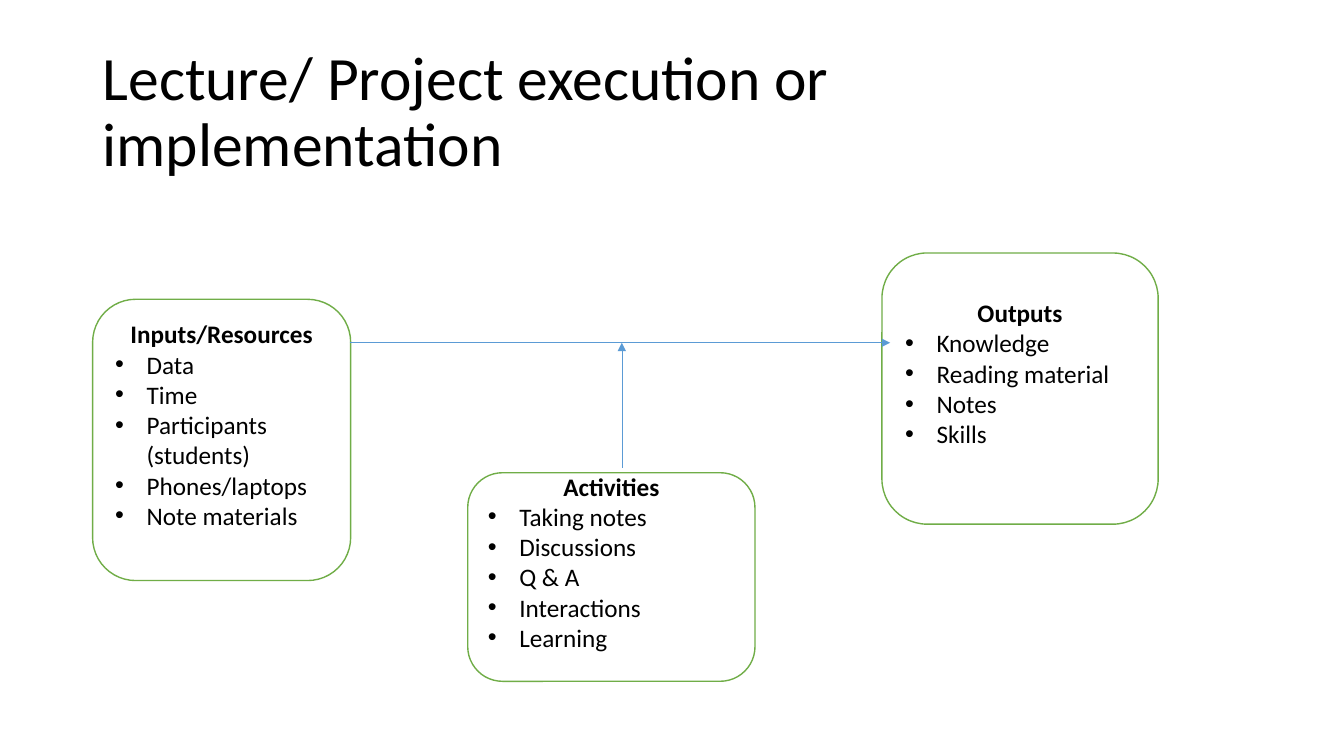
from lxml.etree import SubElement
from pptx import Presentation
from pptx.dml.color import RGBColor
from pptx.enum.shapes import MSO_CONNECTOR, MSO_SHAPE
from pptx.enum.text import MSO_ANCHOR, PP_ALIGN
from pptx.oxml.ns import qn
from pptx.util import Pt

COLORS = {"text": "000000", "box": "FFFFFF", "outline": "70AD47", "arrow": "5B9BD5"}
FONT = "Calibri"
INDENT = Pt(22.5)
LINE_HEIGHT = 22

STAGES = [
    ("Inputs/Resources", (66.2, 213.8, 184.3, 200.9),
     ["Data", "Time", "Participants (students)", "Phones/laptops", "Note materials"]),
    ("Outputs", (630, 180.7, 197.3, 193.7),
     ["Knowledge", "Reading material", "Notes", "Skills"]),
    ("Activities", (334.1, 337.7, 205.2, 149),
     ["Taking notes", "Discussions", "Q & A", "Interactions", "Learning"]),
]
ARROWS = [(249.8, 244.8, 635.8, 244.8), (444.2, 334.1, 444.2, 244.8)]


def color(name):
    return RGBColor.from_string(COLORS[name])


def set_font(para, size, bold=False):
    para.font.name = FONT
    para.font.size = Pt(size)
    para.font.bold = bold
    para.font.color.rgb = color("text")


deck = Presentation()
deck.slide_width, deck.slide_height = Pt(960), Pt(540)
slide = deck.slides.add_slide(deck.slide_layouts[6])

title = slide.shapes.add_textbox(Pt(66.2), Pt(28.8), Pt(810), Pt(104.4)).text_frame
title.word_wrap = True
title.vertical_anchor = MSO_ANCHOR.MIDDLE
title.text = "Lecture/ Project execution or implementation"
title.paragraphs[0].line_spacing = 0.9
set_font(title.paragraphs[0], 44)

for heading, bounds, items in STAGES:
    box = slide.shapes.add_shape(MSO_SHAPE.ROUNDED_RECTANGLE, *map(Pt, bounds))
    box.shadow.inherit = False
    box.fill.solid()
    box.fill.fore_color.rgb = color("box")
    box.line.color.rgb = color("outline")
    box.line.width = Pt(1)

    frame = box.text_frame
    frame.word_wrap = True
    frame.vertical_anchor = MSO_ANCHOR.MIDDLE
    # Leave one free line below the list
    frame.margin_bottom = Pt(3.6 + LINE_HEIGHT)
    frame.text = heading
    frame.paragraphs[0].alignment = PP_ALIGN.CENTER
    set_font(frame.paragraphs[0], 18, bold=True)
    for item in items:
        para = frame.add_paragraph()
        para.text = item
        para.alignment = PP_ALIGN.LEFT
        properties = para._p.get_or_add_pPr()
        properties.set("marL", str(INDENT))
        properties.set("indent", str(-INDENT))
        SubElement(properties, qn("a:buFont"), typeface="Arial")
        SubElement(properties, qn("a:buChar"), char="•")
        set_font(para, 18)

for ends in ARROWS:
    arrow = slide.shapes.add_connector(MSO_CONNECTOR.STRAIGHT, *map(Pt, ends))
    arrow.line.color.rgb = color("arrow")
    arrow.line.width = Pt(0.5)
    SubElement(arrow.line._get_or_add_ln(), qn("a:tailEnd"), type="triangle")
    SubElement(arrow._element.spPr, qn("a:effectLst"))

deck.save("out.pptx")
